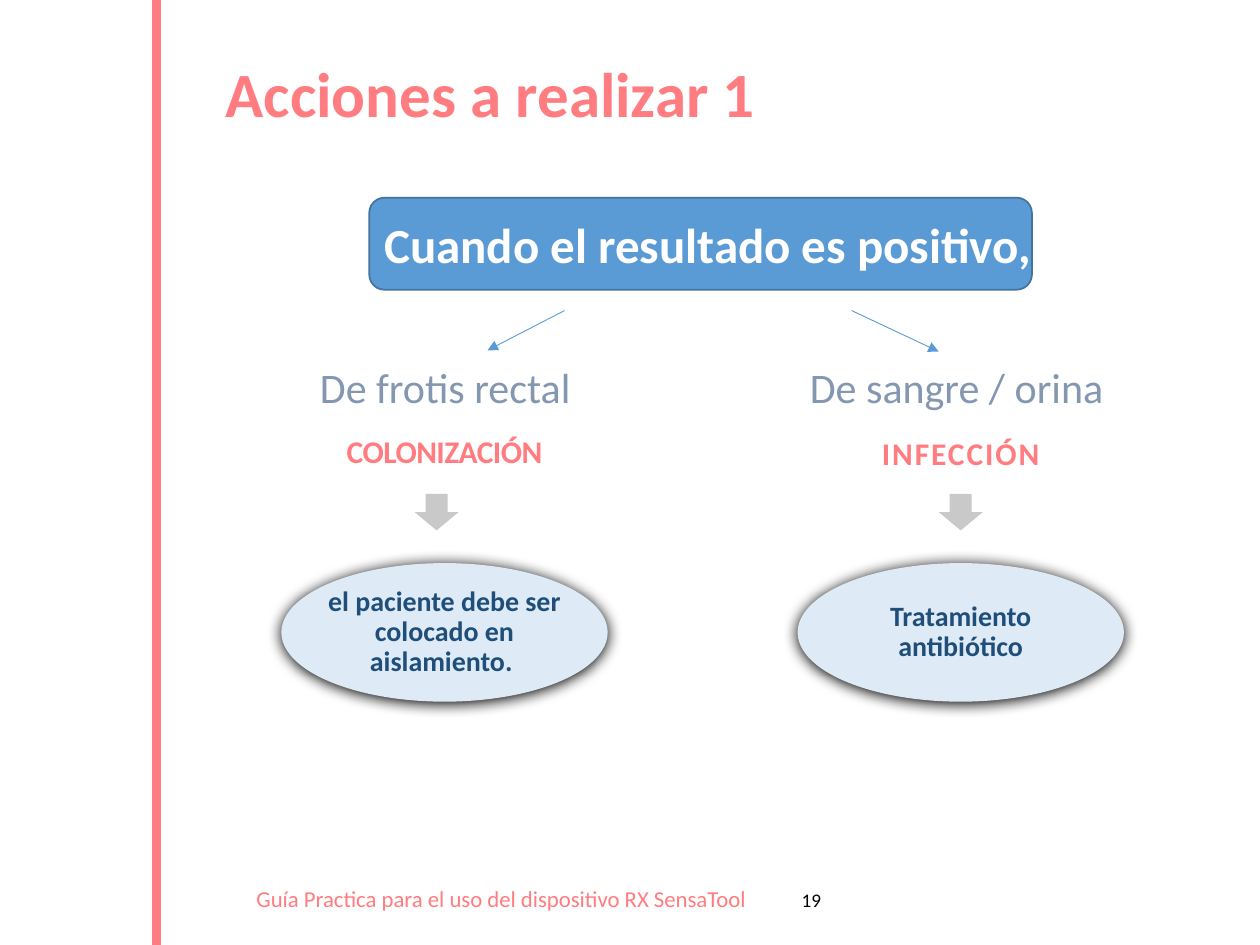
from lxml import etree
from pptx import Presentation
from pptx.dml.color import RGBColor
from pptx.enum import shapes, text
from pptx.oxml import ns
from pptx.util import Pt

CORAL = RGBColor(0xFF, 0x7C, 0x80)
BLUE = RGBColor(0x5B, 0x9B, 0xD5)
BLUE_EDGE = RGBColor(0x43, 0x73, 0x9E)
SLATE = RGBColor(0x84, 0x97, 0xB0)
PALE = RGBColor(0xDE, 0xEB, 0xF7)
NAVY = RGBColor(0x1F, 0x4E, 0x79)
GREY = RGBColor(0xC9, 0xC9, 0xC9)
WHITE = RGBColor(0xFF, 0xFF, 0xFF)
BLACK = RGBColor(0, 0, 0)

CENTER, LEFT = text.PP_ALIGN.CENTER, text.PP_ALIGN.LEFT
TOP, MIDDLE = text.MSO_ANCHOR.TOP, text.MSO_ANCHOR.MIDDLE
SHAPE = shapes.MSO_SHAPE

# Heading, its center and width; label, its top, width and letter spacing;
# arrow center; oval center and text
BRANCHES = [
    ("De frotis rectal ", 257.1, 214.6, "COLONIZACIÓN", 247.7, 116.6, -30,
     249.5, 254, "el paciente debe ser colocado en aislamiento. "),
    ("De sangre / orina ", 549.4, 233.3, "INFECCIÓN", 249.1, 110.2, 110,
     549, 549, "Tratamiento antibiótico"),
]


def write(sp, words, size, color, bold=False, align=CENTER, anchor=TOP,
          inset=(7.2, 3.6), spacing=None, tracking=None):
    tf = sp.text_frame
    tf.word_wrap = True
    tf.vertical_anchor = anchor
    tf.margin_left = tf.margin_right = Pt(inset[0])
    tf.margin_top = tf.margin_bottom = Pt(inset[1])
    p = tf.paragraphs[0]
    p.alignment = align
    if spacing:
        p.line_spacing = spacing
    r = p.add_run()
    r.text = words
    r.font.name, r.font.size, r.font.bold = "Calibri", Pt(size), bold
    r.font.color.rgb = color
    if tracking is not None:
        r._r.get_or_add_rPr().set("spc", str(tracking))


def add_text(s, x, y, w, h, words, size, color, **style):
    sp = s.shapes.add_textbox(Pt(x), Pt(y), Pt(w), Pt(h))
    write(sp, words, size, color, **style)


def add_shape(s, kind, x, y, w, h, fill, edge=None):
    sp = s.shapes.add_shape(kind, Pt(x), Pt(y), Pt(w), Pt(h))
    sp.shadow.inherit = False
    sp.fill.solid()
    sp.fill.fore_color.rgb = fill
    if edge is None:
        sp.line.fill.background()
    else:
        sp.line.color.rgb = edge
        sp.line.width = Pt(1)
    return sp


def add_line(s, x1, y1, x2, y2, color, width, arrow=False):
    c = s.shapes.add_connector(shapes.MSO_CONNECTOR.STRAIGHT,
                               Pt(x1), Pt(y1), Pt(x2), Pt(y2))
    c.line.color.rgb = color
    c.line.width = Pt(width)
    if arrow:
        ln = c.line._get_or_add_ln()
        etree.SubElement(ln, ns.qn("a:tailEnd"), type="triangle")
    etree.SubElement(c._element.spPr, ns.qn("a:effectLst"))


def add_glow_oval(s, cx, words):
    w = 186.5
    sp = add_shape(s, SHAPE.OVAL, cx - w / 2, 321.8, w, 79.2, PALE)
    # Soft shadow just below the oval
    effects = sp._element.spPr.find(ns.qn("a:effectLst"))
    shadow = etree.SubElement(effects, ns.qn("a:outerShdw"), blurRad=str(Pt(8.5)),
                              dist=str(Pt(1)), dir="5400000", rotWithShape="0")
    etree.SubElement(shadow, ns.qn("a:srgbClr"), val=str(BLACK))
    # Negative side insets let the lines run wider than the oval's text area
    write(sp, words, 16, NAVY, bold=True, anchor=MIDDLE, inset=(-8, 0), spacing=0.9)


def add_branch(s, heading, head_x, head_w, label, label_y, label_w, tracking,
               arrow_x, oval_x, outcome):
    style = dict(anchor=MIDDLE, inset=(2, 2), spacing=0.9)
    add_text(s, head_x - head_w / 2, 208.1, head_w, 29.5, heading, 24, SLATE, **style)
    add_text(s, oval_x - label_w / 2, label_y, label_w, 22.5, label, 18, CORAL,
             bold=True, tracking=tracking, **style)
    add_shape(s, SHAPE.DOWN_ARROW, arrow_x - 12.6, 282.2, 25.2, 20.9, GREY)
    add_glow_oval(s, oval_x, outcome)


def add_title(s, words):
    sp = s.shapes.title
    sp.left, sp.top, sp.width, sp.height = Pt(121.7), Pt(32.4), Pt(549.4), Pt(67)
    write(sp, words, 36, CORAL, bold=True, align=LEFT, spacing=0.9)


def main():
    prs = Presentation()
    prs.slide_width, prs.slide_height = Pt(720), Pt(540)
    s = prs.slides.add_slide(prs.slide_layouts[5])

    # Side rule and title
    add_line(s, 89.3, 540, 89.3, 0, CORAL, 5)
    add_title(s, "Acciones a realizar 1")

    # Starting condition
    add_shape(s, SHAPE.ROUNDED_RECTANGLE, 211, 113, 378.7, 52.6, BLUE, BLUE_EDGE)
    add_text(s, 207.4, 118.8, 393.8, 41, "Cuando el resultado es positivo,",
             28, WHITE, bold=True)

    # Two branches
    add_line(s, 322.6, 177.5, 278.6, 200.2, BLUE, 0.5, arrow=True)
    add_line(s, 486.7, 177.5, 536.4, 200.9, BLUE, 0.5, arrow=True)
    for branch in BRANCHES:
        add_branch(s, *branch)

    # Footer and page number
    add_text(s, 117, 501.8, 338.4, 23, "Guía Practica para el uso del dispositivo RX SensaTool",
             13, CORAL)
    add_text(s, 447.8, 504, 31.7, 20.9, "19", 11, BLACK)

    prs.save("out.pptx")


if __name__ == "__main__":
    main()
